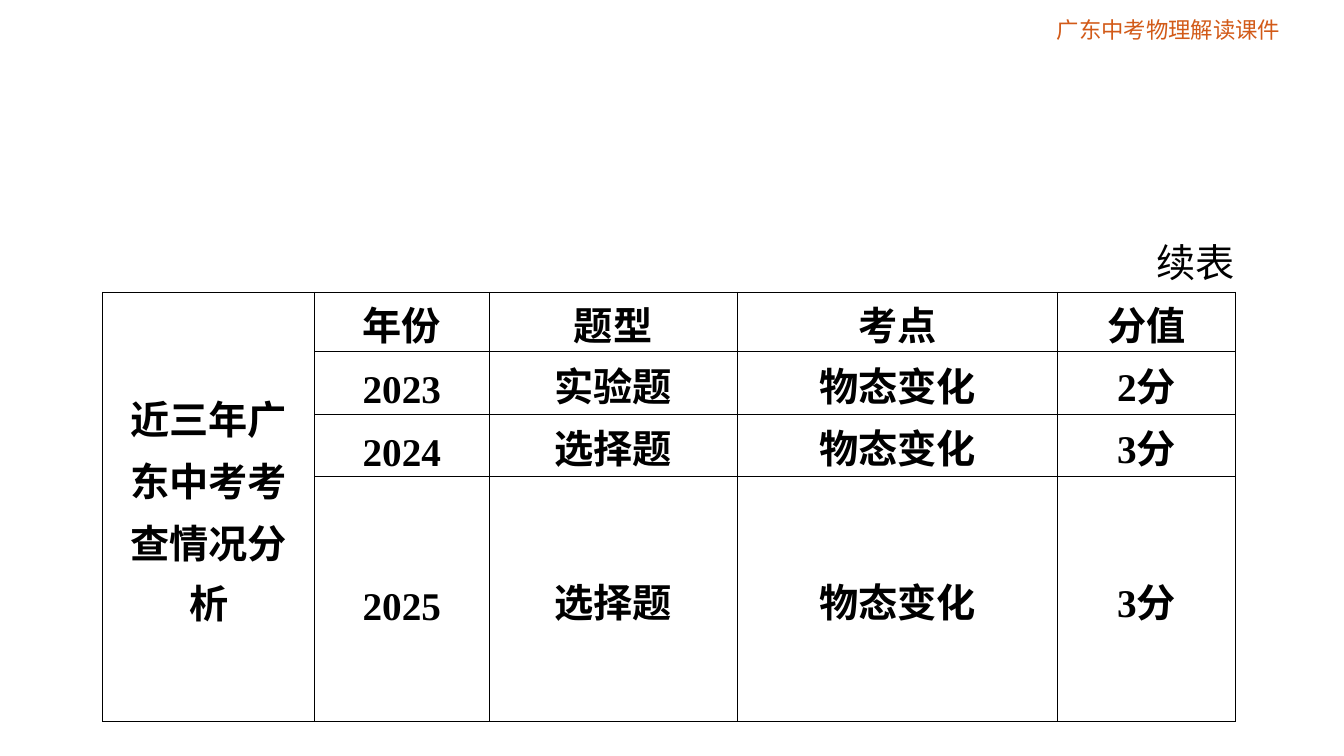
import pptx
import pptx.dml.color
import pptx.enum.text
import pptx.oxml
import pptx.oxml.ns
import pptx.util

Inches = pptx.util.Inches
Pt = pptx.util.Pt
ALIGN = pptx.enum.text.PP_ALIGN
ANCHOR = pptx.enum.text.MSO_ANCHOR

BLACK = pptx.dml.color.RGBColor(0x00, 0x00, 0x00)
ORANGE = pptx.dml.color.RGBColor(0xD2, 0x5A, 0x18)

HEADER_FONT = {"name": "Times New Roman", "size": Pt(16)}
BODY_FONT = {"name": "Times New Roman", "size": Pt(28)}
TABLE_FONT = {**BODY_FONT, "bold": True}

COLUMN_WIDTHS = [2.1, 1.73, 2.46, 3.18, 1.76]
ROW_HEIGHTS = [0.59, 0.62, 0.62, 0.62]
SIDE_HEADING = ["近三年广", "东中考考", "查情况分", "析"]
EXAM_ROWS = [
    ["年份", "题型", "考点", "分值"],
    ["2023", "实验题", "物态变化", "2分"],
    ["2024", "选择题", "物态变化", "3分"],
    ["2025", "选择题", "物态变化", "3分"],
]


def apply_format(target, values):
    for name, value in values.items():
        setattr(target, name, value)


def write_para(para, text, font, color, align, spacing=None):
    para.alignment = align
    if spacing:
        para.line_spacing = Pt(spacing)
    span = para.add_run()
    span.text = text
    apply_format(span.font, font)
    span.font.color.rgb = color


def add_label(page, area, text, font, color, align, anchor, wrap, spacing=None):
    box = page.shapes.add_textbox(*map(Inches, area))
    frame = box.text_frame
    apply_format(frame, {
        "margin_left": 0, "margin_right": 0, "margin_top": 0, "margin_bottom": 0,
        "vertical_anchor": anchor, "word_wrap": wrap,
    })
    write_para(frame.paragraphs[0], text, font, color, align, spacing)


def add_borders(cell):
    properties = cell._tc.get_or_add_tcPr()
    for side in ("lnL", "lnR", "lnT", "lnB"):
        properties.append(pptx.oxml.parse_xml(
            f'<a:{side} {pptx.oxml.ns.nsdecls("a")} w="{Pt(0.75)}">'
            f'<a:solidFill><a:srgbClr val="{BLACK}"/></a:solidFill></a:{side}>'
        ))


def fill_cell(cell, lines, spacings):
    apply_format(cell, {
        "margin_left": Inches(0.08), "margin_right": Inches(0.08),
        "margin_top": 0, "margin_bottom": 0, "vertical_anchor": ANCHOR.MIDDLE,
    })
    frame = cell.text_frame
    for index, (line, spacing) in enumerate(zip(lines, spacings)):
        para = frame.add_paragraph() if index else frame.paragraphs[0]
        write_para(para, line, TABLE_FONT, BLACK, ALIGN.CENTER, spacing)


def add_exam_table(page, left, top):
    area = (left, top, sum(COLUMN_WIDTHS), sum(ROW_HEIGHTS))
    table = page.shapes.add_table(
        len(ROW_HEIGHTS), len(COLUMN_WIDTHS), *map(Inches, area)).table
    apply_format(table, {"first_row": False, "horz_banding": False})
    for column, width in zip(table.columns, COLUMN_WIDTHS):
        column.width = Inches(width)
    for row, height in zip(table.rows, ROW_HEIGHTS):
        row.height = Inches(height)
    for cell in table.iter_cells():
        add_borders(cell)
        cell.fill.background()
    table.cell(0, 0).merge(table.cell(len(ROW_HEIGHTS) - 1, 0))
    fill_cell(table.cell(0, 0), SIDE_HEADING, [44, 44, 44, 43])
    for row_index, values in enumerate(EXAM_ROWS):
        for column_index, value in enumerate(values, start=1):
            fill_cell(table.cell(row_index, column_index), [value], [42])


def main():
    deck = pptx.Presentation()
    deck.slide_width, deck.slide_height = Inches(13.33), Inches(7.5)
    page = deck.slides.add_slide(deck.slide_layouts.get_by_name("Blank"))
    add_label(page, (10.02, 0.15, 3.14, 0.28), "广东中考物理解读课件",
              HEADER_FONT, ORANGE, ALIGN.CENTER, ANCHOR.MIDDLE, True)
    add_exam_table(page, 1.02, 2.9)
    add_label(page, (11.47, 2.14, 0.78, 0.7), "续表",
              BODY_FONT, BLACK, ALIGN.RIGHT, ANCHOR.TOP, False, 50)
    deck.save("out.pptx")


if __name__ == "__main__":
    main()
